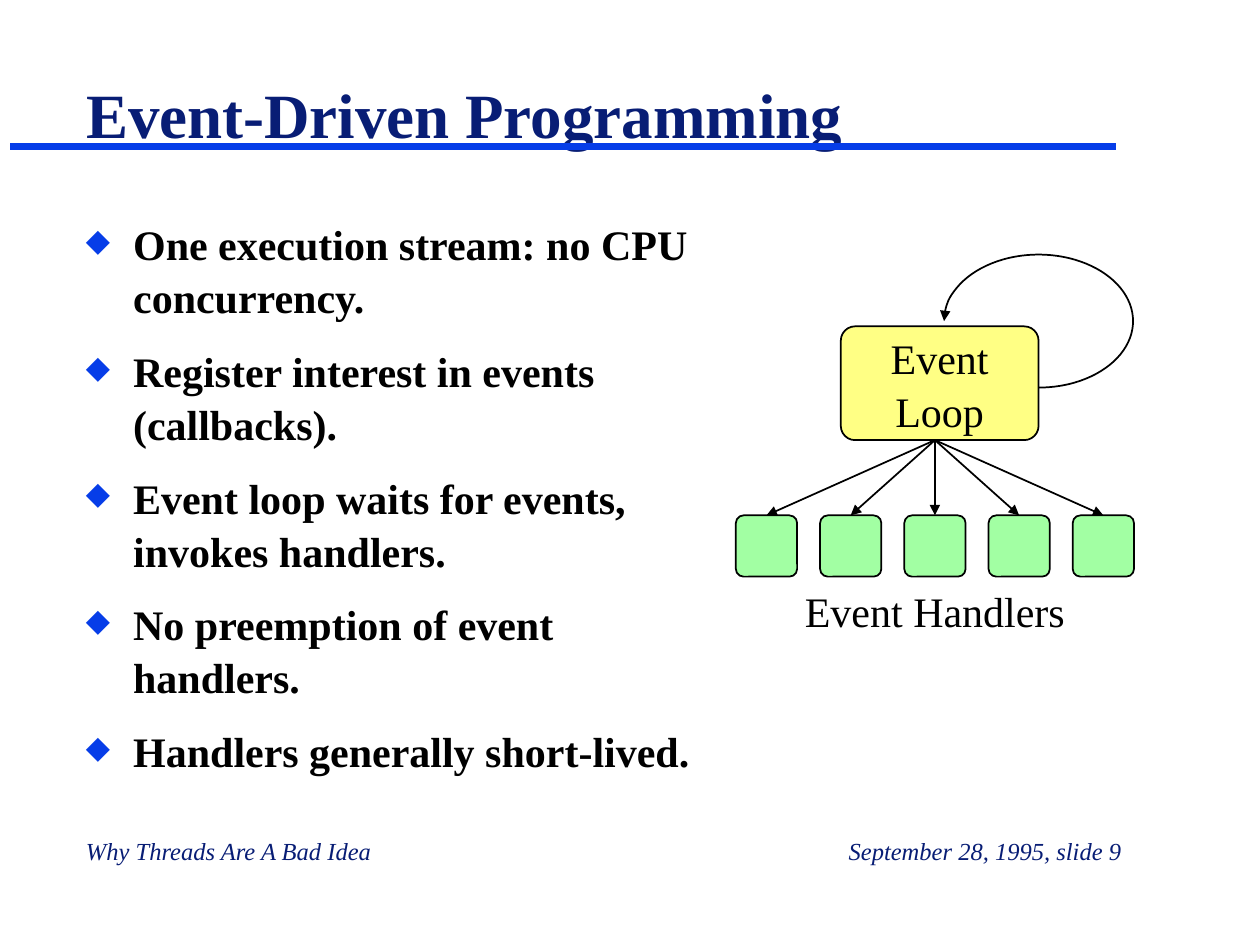
from dataclasses import dataclass

from lxml import etree
from pptx import Presentation
from pptx import util as u
from pptx.dml.color import RGBColor
from pptx.enum import shapes, text
from pptx.oxml import ns

Pt = u.Pt


@dataclass(frozen=True)
class Theme:
    font: str = "Times New Roman"
    navy: str = "081D75"
    blue: str = "063DE8"
    ink: str = "000000"
    loop: str = "FFFF84"
    handler: str = "A2FFA3"
    title: int = 36
    body: int = 24
    footer: int = 14
    rule: int = 4
    stroke: int = 1


THEME = Theme()
ALIGN = text.PP_ALIGN


def colour(code):
    return RGBColor.from_string(code)


def add_xml(parent, tag, **attributes):
    return etree.SubElement(parent, ns.qn(tag), attributes)


def write(frame, lines, size, ink=THEME.ink, align=ALIGN.LEFT, gap=0, spacing=None,
          anchor=text.MSO_ANCHOR.TOP, wrap=True, **style):
    """Fill a text frame, one paragraph for each line."""
    layout = {"word_wrap": wrap, "auto_size": text.MSO_AUTO_SIZE.NONE, "vertical_anchor": anchor}
    for key, value in layout.items():
        setattr(frame, key, value)
    frame.text = "\n".join(lines)
    font_format = {"name": THEME.font, "size": Pt(size), **style}
    for index, paragraph in enumerate(frame.paragraphs):
        paragraph.alignment = align
        paragraph.line_spacing = spacing
        paragraph.space_before = Pt(gap if index else 0)
        font = paragraph.runs[0].font
        font.color.rgb = colour(ink)
        for key, value in font_format.items():
            setattr(font, key, value)


def add_label(slide, box, lines, size, **style):
    label = slide.shapes.add_textbox(*map(Pt, box))
    write(label.text_frame, lines, size, **style)
    return label


def add_line(slide, start, end, ink=THEME.ink, width=THEME.stroke, arrow=False):
    line = slide.shapes.add_connector(shapes.MSO_CONNECTOR.STRAIGHT, *map(Pt, start + end))
    line.line.color.rgb = colour(ink)
    line.line.width = Pt(width)
    if arrow:
        add_xml(line.line._get_or_add_ln(), "a:tailEnd", type="triangle")
    add_xml(line._element.spPr, "a:effectLst")


def add_outlined(slide, kind, box, fill, adjustments):
    shape = slide.shapes.add_shape(kind, *map(Pt, box))
    shape.shadow.inherit = False
    for index, value in enumerate(adjustments):
        shape.adjustments[index] = value
    if fill:
        shape.fill.solid()
        shape.fill.fore_color.rgb = colour(fill)
    else:
        shape.fill.background()
    shape.line.color.rgb = colour(THEME.ink)
    shape.line.width = Pt(THEME.stroke)
    return shape


def add_heading(slide, box, heading):
    left, top, width, height = box
    # Rule behind the title
    rule_y = top + height - 6
    add_line(slide, (6, rule_y), (638, rule_y), THEME.blue, THEME.rule)
    title = slide.shapes.title
    for key, value in zip(("left", "top", "width", "height"), box):
        setattr(title, key, Pt(value))
    write(title.text_frame, [heading], THEME.title, ink=THEME.navy,
          anchor=text.MSO_ANCHOR.BOTTOM, bold=True)


def add_footer(slide, box, left_text, right_text):
    left, top, width, height = box
    half = width / 2
    for x, words, align in ((left, left_text, ALIGN.LEFT),
                            (left + half, right_text, ALIGN.RIGHT)):
        add_label(slide, (x, top, half, height), [words], THEME.footer,
                  ink=THEME.navy, align=align, italic=True)


def add_bullets(slide, box, points):
    body = add_label(slide, box, points, THEME.body, gap=12, spacing=1.05, bold=True)
    indent = Pt(27)
    for paragraph in body.text_frame.paragraphs:
        properties = paragraph._p.get_or_add_pPr()
        properties.set("marL", str(indent))
        properties.set("indent", str(-indent))
        bullet_colour = add_xml(properties, "a:buClr")
        add_xml(bullet_colour, "a:srgbClr", val=THEME.blue)
        add_xml(properties, "a:buSzPct", val="75000")
        add_xml(properties, "a:buChar", char="◆")


def add_event_diagram(slide, box, handlers=5):
    left, top, width, height = box
    middle = left + width / 2
    rounded = shapes.MSO_SHAPE.ROUNDED_RECTANGLE

    # Event loop
    loop_top, loop_height = top + 41, 65
    loop = add_outlined(slide, rounded, (left + 60, loop_top, 113, loop_height),
                        THEME.loop, [0.125])
    write(loop.text_frame, ["Event", "Loop"], THEME.body, align=ALIGN.CENTER, spacing=1.05,
          anchor=text.MSO_ANCHOR.MIDDLE, wrap=False)

    # Arrow back into the loop, from 180 round to 90 degrees
    repeat = add_outlined(slide, shapes.MSO_SHAPE.ARC, (left + 119, top, 108, 76),
                          None, [108, 54])
    add_xml(repeat.line._get_or_add_ln(), "a:headEnd", type="triangle")

    # Handlers, each with an arrow from the loop
    side, handler_top = 35, top + 149
    step = (width - side) / (handlers - 1)
    for index in range(handlers):
        x = left + index * step
        add_outlined(slide, rounded, (x, handler_top, side, side), THEME.handler, [0.125])
        add_line(slide, (middle, loop_top + loop_height), (x + side / 2, handler_top),
                 arrow=True)

    caption_top = handler_top + side
    add_label(slide, (left, caption_top, width, top + height - caption_top),
              ["Event Handlers"], THEME.body, align=ALIGN.CENTER, spacing=1.05)


def main():
    deck = Presentation()
    deck.slide_width, deck.slide_height = Pt(720), Pt(540)
    slide = deck.slides.add_slide(deck.slide_layouts[5])
    add_heading(slide, (42, 3, 600, 87), "Event-Driven Programming")
    add_footer(slide, (42, 474, 606, 24),
               "Why Threads Are A Bad Idea", "September 28, 1995, slide 9")
    add_bullets(slide, (42, 120, 360, 342), [
        "One execution stream: no CPU concurrency.",
        "Register interest in events (callbacks).",
        "Event loop waits for events, invokes handlers.",
        "No preemption of event handlers.",
        "Handlers generally short-lived.",
    ])
    add_event_diagram(slide, (420.5, 145.5, 227.5, 220), handlers=5)
    deck.save("out.pptx")


if __name__ == "__main__":
    main()
